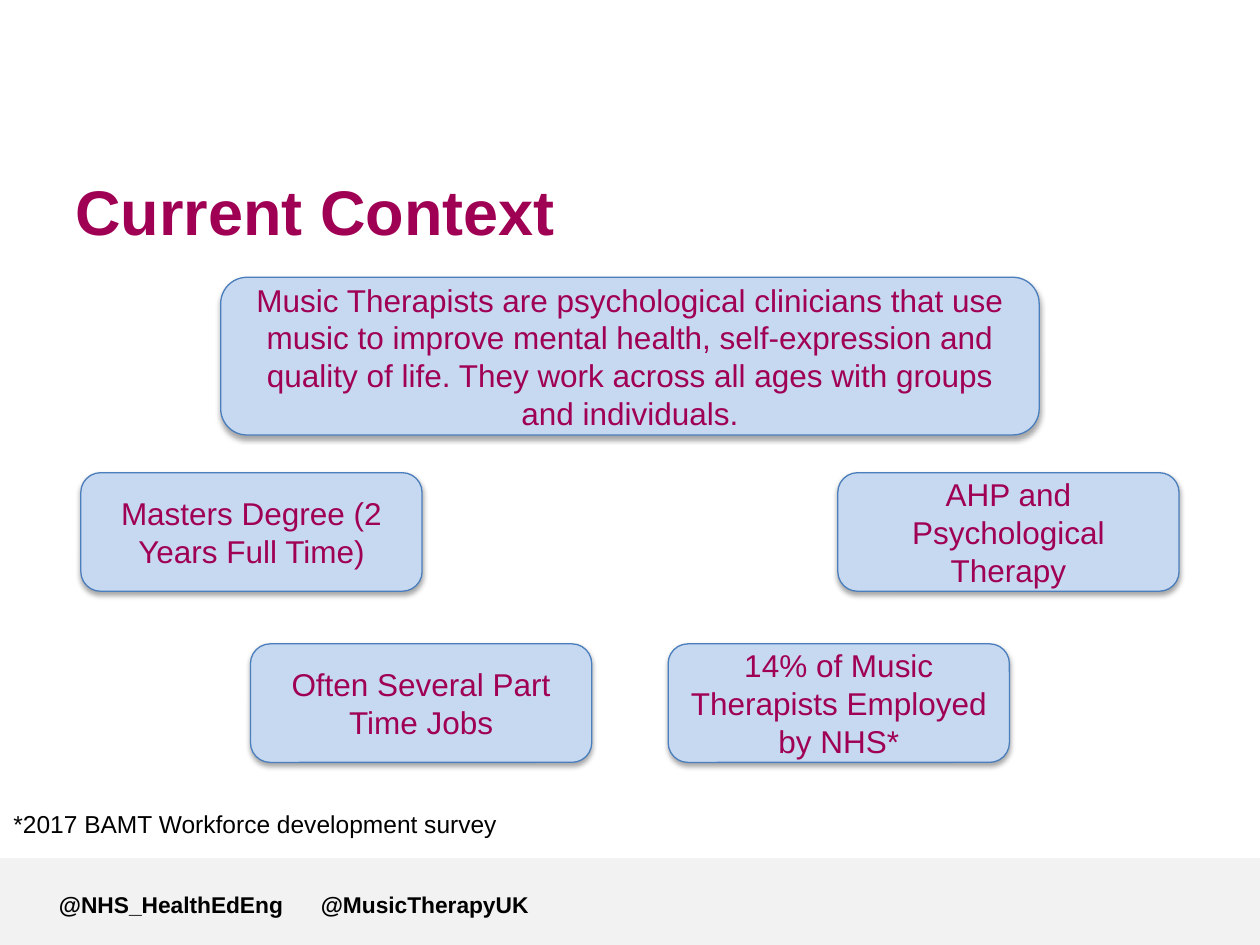
from dataclasses import dataclass

from lxml import etree
from pptx import Presentation
from pptx import util as u
from pptx.dml.color import RGBColor
from pptx.enum import shapes, text
from pptx.oxml import ns


@dataclass(frozen=True)
class Theme:
    font: str = "Arial"
    plum: str = "A00054"
    black: str = "000000"
    band: str = "F2F2F2"
    card: str = "C6D9F1"
    card_line: str = "4B7EBC"
    title_size: float = 36
    card_size: float = 18
    note_size: float = 14
    handle_size: float = 13


THEME = Theme()
PAGE_WIDTH, PAGE_HEIGHT = 25.4, 19.05
CARD_WIDTH, CARD_HEIGHT = 6.88, 2.39
INTRO = ("Music Therapists are psychological clinicians that use music to improve "
         "mental health, self-expression and quality of life. They work across all "
         "ages with groups and individuals.")
# Each row: top, left margin (mirrored on the right), left and right wording
CARD_ROWS = [
    (9.53, 1.63, "Masters Degree (2 Years Full Time)", "AHP and Psychological Therapy"),
    (12.98, 5.05, "Often Several Part Time Jobs",
     "14% of Music Therapists Employed by NHS*"),
]


def add_span(para, wording, size, colour, bold=False):
    span = para.add_run()
    span.text = wording
    span.font.name = THEME.font
    span.font.size = u.Pt(size)
    span.font.bold = bold
    span.font.color.rgb = RGBColor.from_string(colour)


def add_text_box(page, area):
    box = page.shapes.add_textbox(*map(u.Cm, area))
    box.text_frame.word_wrap = True
    return box.text_frame


def add_shape(page, kind, area, fill):
    shape = page.shapes.add_shape(kind, *map(u.Cm, area))
    shape.shadow.inherit = False
    shape.fill.solid()
    shape.fill.fore_color.rgb = RGBColor.from_string(fill)
    return shape


def add_soft_shadow(shape):
    effects = shape._element.spPr.find(ns.qn("a:effectLst"))
    shadow = etree.SubElement(effects, ns.qn("a:outerShdw"), blurRad=str(u.Pt(3.1)),
                              dist=str(u.Pt(1.8)), dir="5400000", rotWithShape="0")
    colour = etree.SubElement(shadow, ns.qn("a:srgbClr"), val=THEME.black)
    etree.SubElement(colour, ns.qn("a:alpha"), val="35000")


def add_card(page, area, wording):
    card = add_shape(page, shapes.MSO_SHAPE.ROUNDED_RECTANGLE, area, THEME.card)
    card.line.color.rgb = RGBColor.from_string(THEME.card_line)
    card.line.width = u.Pt(0.75)
    add_soft_shadow(card)
    frame = card.text_frame
    frame.word_wrap = True
    frame.vertical_anchor = text.MSO_ANCHOR.MIDDLE
    para = frame.paragraphs[0]
    para.alignment = text.PP_ALIGN.CENTER
    add_span(para, wording, THEME.card_size, THEME.plum)


def add_title(page, area):
    frame = add_text_box(page, area)
    frame.vertical_anchor = text.MSO_ANCHOR.MIDDLE
    add_span(frame.paragraphs[0], "Current Context", THEME.title_size, THEME.plum, True)


def add_facts(page, area):
    left, top, width, height = area
    # Introduction, centred above the cards
    add_card(page, (left + 4.45, top, width - 2 * 4.45, 3.18), INTRO)
    # Two mirrored pairs of cards
    for row_top, margin, left_wording, right_wording in CARD_ROWS:
        right_edge = left + width - margin - CARD_WIDTH
        for x, wording in ((left + margin, left_wording), (right_edge, right_wording)):
            add_card(page, (x, top + row_top - 5.59, CARD_WIDTH, CARD_HEIGHT), wording)


def add_footnote(page, area):
    frame = add_text_box(page, area)
    add_span(frame.paragraphs[0], "*2017 BAMT Workforce development survey",
             THEME.note_size, THEME.black)


def add_footer(page, area):
    left, top, _, _ = area
    band = add_shape(page, shapes.MSO_SHAPE.RECTANGLE, area, THEME.band)
    band.line.fill.background()
    frame = add_text_box(page, (left + 0.94, top + 0.53, 14.83, 1.02))
    para = frame.paragraphs[0]
    # A tab stop separates the two handles
    tabs = etree.SubElement(para._p.get_or_add_pPr(), ns.qn("a:tabLst"))
    etree.SubElement(tabs, ns.qn("a:tab"), pos=str(u.Cm(5.28)), algn="l")
    for wording in ("@NHS_HealthEdEng", "\t@MusicTherapyUK"):
        add_span(para, wording, THEME.handle_size, THEME.black, True)


def main():
    deck = Presentation()
    deck.slide_width, deck.slide_height = u.Cm(PAGE_WIDTH), u.Cm(PAGE_HEIGHT)
    page = deck.slides.add_slide(deck.slide_layouts[6])
    add_footer(page, (0, 17.3, PAGE_WIDTH, 1.75))
    add_title(page, (1.27, 3.3, 21.59, 1.88))
    add_facts(page, (0, 5.59, PAGE_WIDTH, 9.78))
    add_footnote(page, (0.02, 16.18, 11.46, 0.86))
    deck.save("out.pptx")


if __name__ == "__main__":
    main()
